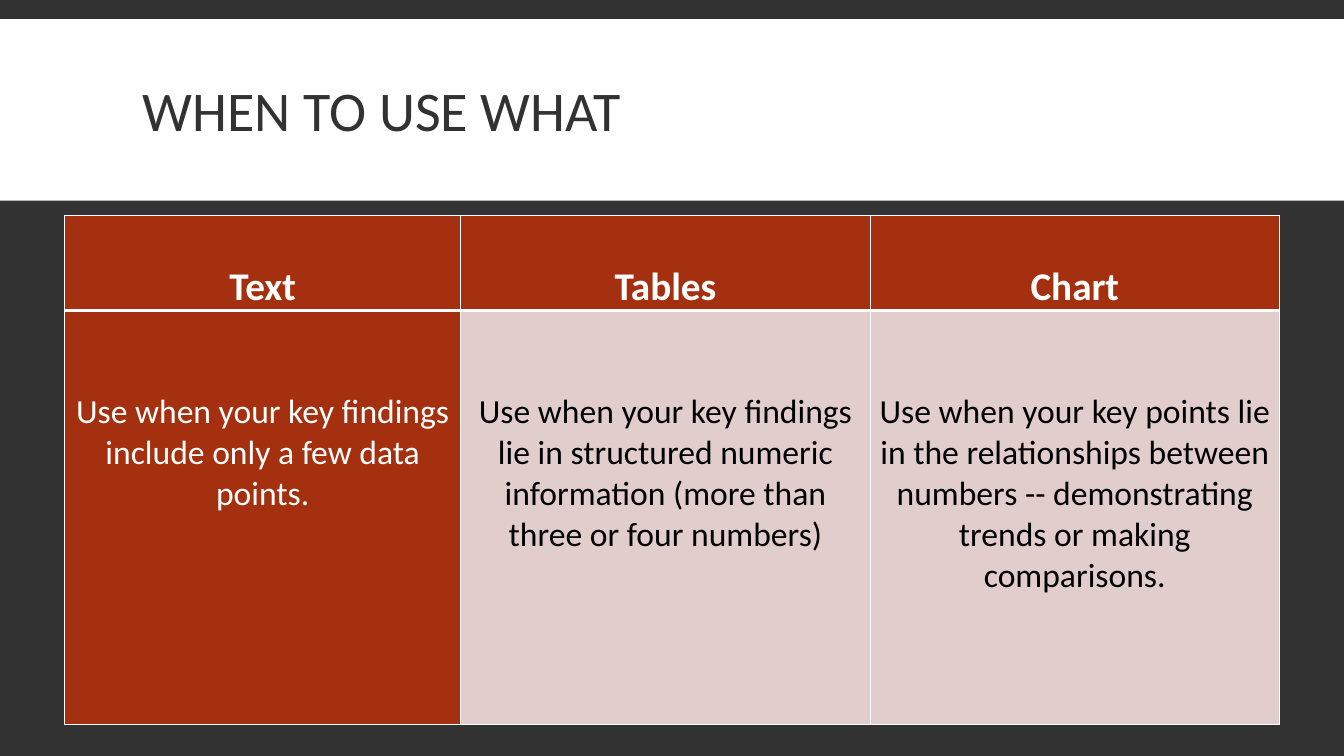
import pptx
import pptx.dml.color
import pptx.enum.shapes
import pptx.enum.text
import pptx.oxml.ns
import pptx.util
import lxml.etree

Inches = pptx.util.Inches
Pt = pptx.util.Pt

TITLE = "WHEN TO USE WHAT"
GUIDANCE = [
    ("Text", "Use when your key findings include only a few data points."),
    ("Tables", "Use when your key findings lie in structured numeric information "
               "(more than three or four numbers)"),
    ("Chart", "Use when your key points lie in the relationships between numbers "
              "-- demonstrating trends or making comparisons."),
]
COLUMN_WIDTHS = (3.93, 4.06, 4.06)
ROW_HEIGHTS = (0.94, 4.11)

THEME = {
    "font": "Calibri",
    "dark": "323232", "white": "FFFFFF", "black": "000000",
    "rust": "A5300F", "blush": "E1CDCC",
    "title": 40, "heading": 28, "body": 24,
    "thin": 1, "thick": 3,
}


def color(name):
    return pptx.dml.color.RGBColor.from_string(THEME[name])


def paint(fill, name):
    fill.solid()
    fill.fore_color.rgb = color(name)


def write(frame, text, size, ink, bold=False, spacing=1, align="LEFT"):
    frame.word_wrap = True
    para = frame.paragraphs[0]
    para.alignment = getattr(pptx.enum.text.PP_ALIGN, align)
    para.line_spacing = spacing
    span = para.add_run()
    span.text = text
    span.font.name = THEME["font"]
    span.font.size = Pt(THEME[size])
    span.font.bold = bold
    span.font.color.rgb = color(ink)


def add_borders(cell, **weights):
    properties = cell._tc.get_or_add_tcPr()
    qn = pptx.oxml.ns.qn
    for side in "LRTB":
        width = Pt(THEME[weights.get(side, "thin")])
        line = lxml.etree.SubElement(properties, qn(f"a:ln{side}"), w=str(width))
        fill = lxml.etree.SubElement(line, qn("a:solidFill"))
        lxml.etree.SubElement(fill, qn("a:srgbClr"), val=THEME["white"])


def format_cell(cell, fill, top_margin=0, **borders):
    cell.margin_left = cell.margin_right = Inches(0.05)
    cell.margin_top = Inches(top_margin)
    cell.margin_bottom = 0
    add_borders(cell, **borders)
    paint(cell.fill, fill)


def add_title(page, deck):
    band = page.shapes.add_shape(pptx.enum.shapes.MSO_SHAPE.RECTANGLE,
                                 0, Inches(0.19), deck.slide_width, Inches(1.8))
    band.shadow.inherit = False
    paint(band.fill, "white")
    band.line.fill.background()
    box = page.shapes.add_textbox(Inches(1.32), Inches(0.31), Inches(10.7), Inches(1.65))
    box.text_frame.vertical_anchor = pptx.enum.text.MSO_ANCHOR.MIDDLE
    write(box.text_frame, TITLE, "title", "dark", spacing=0.85)


def add_guidance(page):
    table = page.shapes.add_table(
        len(ROW_HEIGHTS), len(GUIDANCE), Inches(0.64), Inches(2.14),
        Inches(sum(COLUMN_WIDTHS)), Inches(sum(ROW_HEIGHTS))).table
    table.horz_banding = False
    for row, height in zip(table.rows, ROW_HEIGHTS):
        row.height = Inches(height)
    for index, (heading, advice) in enumerate(GUIDANCE):
        table.columns[index].width = Inches(COLUMN_WIDTHS[index])
        top, bottom = table.cell(0, index), table.cell(1, index)
        format_cell(top, "rust", B="thick")
        write(top.text_frame, heading, "heading", "white", bold=True, spacing=2, align="CENTER")
        fill, ink = ("rust", "white") if index == 0 else ("blush", "black")
        format_cell(bottom, fill, top_margin=0.81, T="thick")
        write(bottom.text_frame, advice, "body", ink, align="CENTER")


def main():
    deck = pptx.Presentation()
    deck.slide_width, deck.slide_height = Inches(13.33), Inches(7.5)
    page = deck.slides.add_slide(deck.slide_layouts[6])
    paint(page.background.fill, "dark")
    add_title(page, deck)
    add_guidance(page)
    deck.save("out.pptx")


if __name__ == "__main__":
    main()
